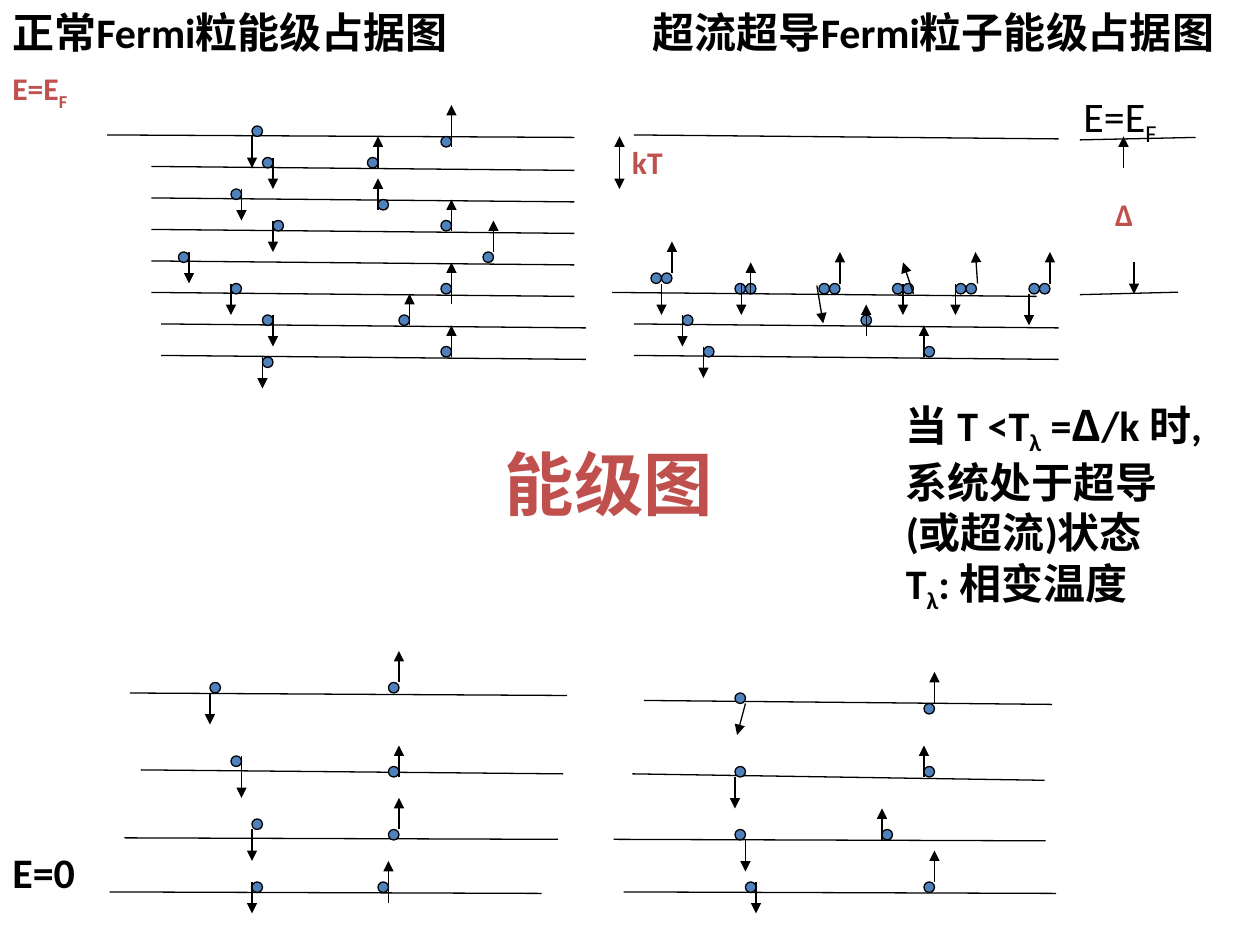
from lxml.etree import SubElement
from pptx import Presentation
from pptx.dml.color import RGBColor
from pptx.enum.shapes import MSO_CONNECTOR, MSO_SHAPE
from pptx.enum.text import MSO_ANCHOR, MSO_AUTO_SIZE, PP_ALIGN
from pptx.oxml.ns import qn
from pptx.util import Cm, Pt

BLACK = RGBColor(0x00, 0x00, 0x00)
RED = RGBColor(0xC0, 0x50, 0x4D)
BLUE = RGBColor(0x4F, 0x81, 0xBD)
LATIN = "Calibri"
HAN = "Noto Sans CJK SC"

GRID = 2.54 / 12  # cm; particles and spins sit on this grid
GAP = 0.635       # cm between neighbouring levels near E_F

# left end, right end, height, drop to the right (cm)
LEVELS = [
    (2.16, 11.58, 2.72, 0.05),
    *[(3.05, 11.58, 2.72 + i * GAP, 0.08) for i in range(1, 6)],
    *[(3.25, 11.81, 2.72 + i * GAP, 0.08) for i in (6, 7)],
    *[(12.78, 21.34, 2.72 + i * GAP, 0.08) for i in (0, 6, 7)],
    (12.34, 20.9, 2.72 + 5 * GAP, 0.08),
    (2.62, 11.43, 13.97, 0.05),
    (2.84, 11.35, 15.52, 0.08),
    (2.51, 11.25, 16.89, 0.03),
    (2.21, 10.92, 17.98, 0.03),
    (12.98, 21.21, 14.12, 0.08),
    (12.75, 21.06, 15.6, 0.13),
    (12.37, 21.08, 16.92, 0.03),
    (12.57, 21.29, 17.98, 0.03),
    (21.77, 24.1, 2.82, -0.05),
    (21.77, 23.75, 5.94, -0.05),
]

# particle x, y; spin x, tail y, head y; sideways lean if any (grid units)
NORMAL = [
    (24, 12, 24, 13, 16), (42, 13, 43, 14, 10),
    (25, 15, 26, 15, 18), (35, 15, 36, 16, 13),
    (22, 18, 23, 18, 21), (36, 19, 36, 20, 17),
    (26, 21, 26, 21, 24), (42, 21, 43, 22, 19),
    (17, 24, 18, 24, 27), (46, 24, 47, 24, 21),
    (22, 27, 22, 27, 30), (42, 27, 43, 29, 25),
    (25, 30, 26, 30, 33), (38, 30, 39, 31, 28),
    (25, 34, 25, 34, 37), (42, 33, 43, 34, 31),
    (20, 65, 20, 66, 69), (37, 65, 38, 65, 62),
    (22, 72, 23, 72, 76), (37, 73, 38, 74, 71),
    (24, 78, 24, 79, 82), (37, 79, 38, 79, 76),
    (24, 84, 24, 84, 87), (36, 84, 37, 86, 82),
]
PAIRED = [
    (62, 26, 63, 27, 30), (63, 26, 64, 26, 23),
    (70, 27, 70.6, 27, 30), (71, 27, 71.5, 28, 25),
    (78, 27, 77.8, 27.2, 30.8, 0.6), (79, 27, 80, 27, 24),
    (85, 27, 86, 27, 30), (86, 27, 87, 28, 25, -1),
    (91, 27, 91, 27, 30), (92, 27, 93.1, 27, 24, -0.2),
    (98, 27, 98, 28, 31), (99, 27, 100, 27, 24),
]
SINGLE = [
    (65, 30, 65, 30, 33), (82, 30, 82.5, 32, 29),
    (67, 33, 67, 33, 36), (88, 33, 88, 34, 31),
    (70, 66, 71, 67, 70, -0.8), (88, 67, 89, 67, 64),
    (70, 73, 70, 74, 77), (88, 73, 88, 74, 71),
    (70, 79, 71, 80, 83), (84, 79, 84, 80, 77),
    (71, 84, 72, 84, 87), (88, 84, 89, 84, 81),
]
# x, tail y, head y (grid units): thermal energy and gap markers
MARKS = [(59, 15, 13), (59, 15, 18), (108, 25, 28), (107, 16, 13)]

# left, top, width, height (cm), size, colour, bold, runs
LABELS = [
    (0, 0, 9.74, 1.06, 24, BLACK, True, ["正常Fermi粒能级占据图"]),
    (12.91, 0, 12.49, 1.27, 24, BLACK, True, ["超流超导Fermi粒子能级占据图"]),
    (0, 1.27, 3.6, 1.27, 18, RED, True, ["E=E", "_F"]),
    (0, 16.93, 2.12, 1.06, 24, BLACK, True, ["E=0"]),
    (21.59, 1.69, 2.54, 1.27, 24, BLACK, False, ["E=E", "_F"]),
    (22.23, 3.81, 1.27, 1.27, 18, RED, True, ["Δ"]),
    (12.49, 2.75, 2.33, 1.06, 18, RED, True, ["kT"]),
]
NOTE = [
    ["当 T <T", "_λ", " =", "Δ", "/k 时,"],
    ["系统处于超导"],
    ["(或超流)状态"],
    ["T", "_λ", ": 相变温度"],
]


def add_run(para, text, size, color, bold, font=LATIN):
    """Add one run; a leading underscore makes it a subscript."""
    run = para.add_run()
    run.text = text.lstrip("_")
    run.font.size = Pt(size)
    run.font.bold = bold
    run.font.color.rgb = color
    run.font.name = font
    props = run.font._element
    SubElement(props, qn("a:ea")).set("typeface", HAN)
    if text.startswith("_"):
        props.set("baseline", "-25000")


def add_box(slide, left, top, width, height):
    box = slide.shapes.add_textbox(Cm(left), Cm(top), Cm(width), Cm(height))
    box.text_frame.word_wrap = True
    return box.text_frame


def add_label(slide, left, top, width, height, size, color, bold, runs):
    para = add_box(slide, left, top, width, height).paragraphs[0]
    para.space_before = Pt(0.2 * size)
    for text in runs:
        add_run(para, text, size, color, bold)


def add_note(slide):
    frame = add_box(slide, 18.01, 7.92, 7.39, 5.38)
    frame.auto_size = MSO_AUTO_SIZE.SHAPE_TO_FIT_TEXT
    for i, runs in enumerate(NOTE):
        para = frame.add_paragraph() if i else frame.paragraphs[0]
        for text in runs:
            add_run(para, text, 24, BLACK, True, HAN if text == "Δ" else LATIN)


def add_line(slide, x1, y1, x2, y2, arrow=False):
    line = slide.shapes.add_connector(
        MSO_CONNECTOR.STRAIGHT, Cm(x1), Cm(y1), Cm(x2), Cm(y2))
    line.line.color.rgb = BLACK
    line.line.width = Pt(0.75)
    if arrow:
        SubElement(line.line._get_or_add_ln(), qn("a:tailEnd")).set("type", "triangle")
    SubElement(line._element.spPr, qn("a:effectLst"))


def add_spin(slide, x, tail, head, lean=0.0):
    add_line(slide, x * GRID, tail * GRID, (x + lean) * GRID, head * GRID, arrow=True)


def add_dot(slide, x, y):
    dot = slide.shapes.add_shape(
        MSO_SHAPE.OVAL, Cm(x * GRID), Cm(y * GRID), Cm(GRID), Cm(GRID))
    dot.shadow.inherit = False
    dot.fill.solid()
    dot.fill.fore_color.rgb = BLUE
    dot.line.color.rgb = BLACK
    dot.line.width = Pt(0.75)


def set_title(slide):
    title = slide.shapes.title
    title.left, title.top = Cm(9.1), Cm(8.89)
    title.width, title.height = Cm(6.35), Cm(1.7)
    frame = title.text_frame
    frame.vertical_anchor = MSO_ANCHOR.MIDDLE
    frame.paragraphs[0].alignment = PP_ALIGN.CENTER
    add_run(frame.paragraphs[0], "能级图", 39.6, RED, True)


def main():
    deck = Presentation()
    deck.slide_width, deck.slide_height = Cm(25.4), Cm(19.05)
    slide = deck.slides.add_slide(deck.slide_layouts[5])
    set_title(slide)
    for left, right, top, drop in LEVELS:
        add_line(slide, left, top, right, top + drop)
    states = NORMAL + PAIRED + SINGLE
    for x, y, *_ in states:
        add_dot(slide, x, y)
    for _, _, *spin in states:
        add_spin(slide, *spin)
    for mark in MARKS:
        add_spin(slide, *mark)
    for label in LABELS:
        add_label(slide, *label)
    add_note(slide)
    deck.save("out.pptx")


if __name__ == "__main__":
    main()
